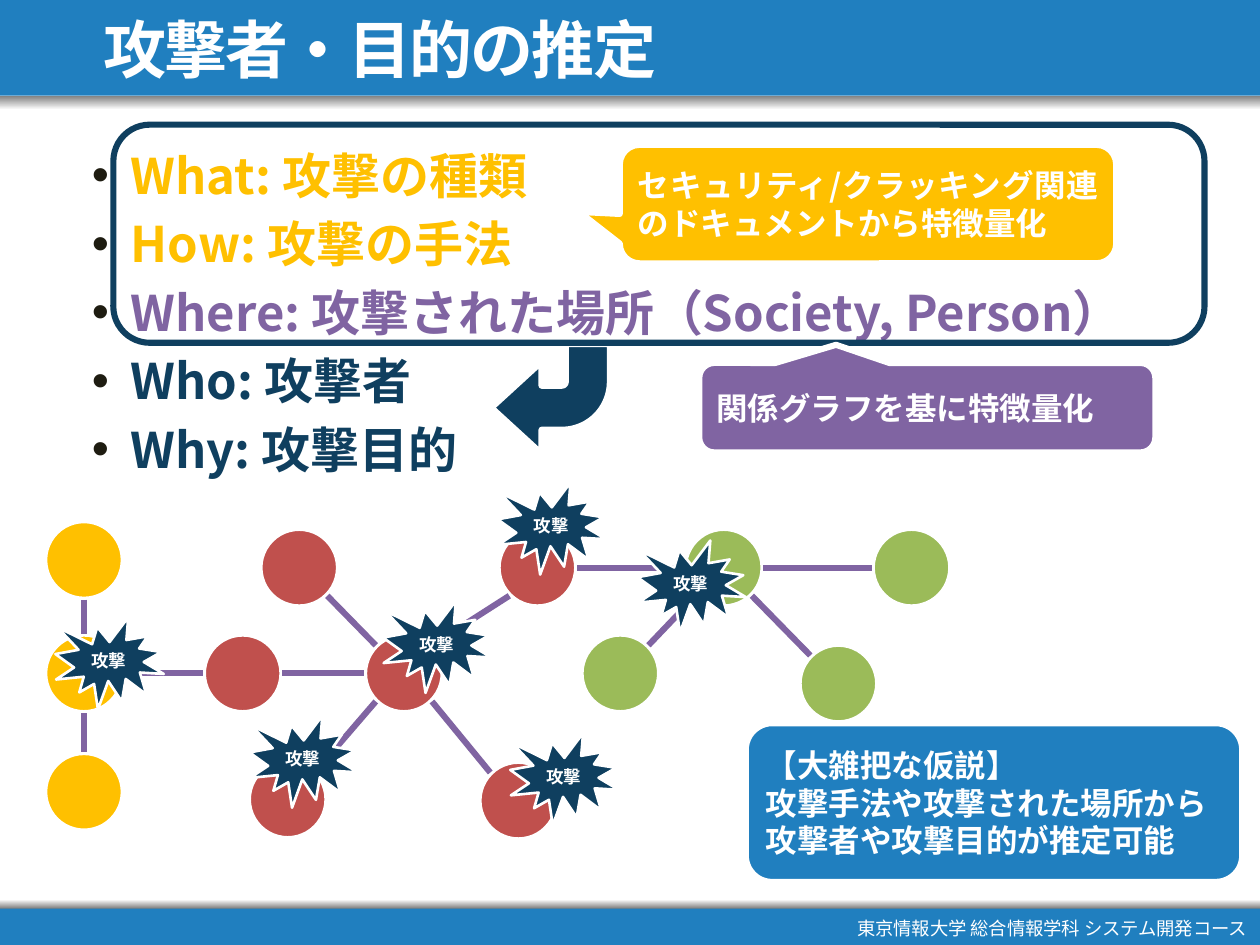
from math import atan2, cos, pi, sin

from lxml.etree import SubElement
from pptx import Presentation
from pptx.dml.color import RGBColor
from pptx.enum.shapes import MSO_CONNECTOR, MSO_SHAPE
from pptx.enum.text import MSO_ANCHOR, PP_ALIGN
from pptx.oxml.ns import qn
from pptx.util import Pt

STRAIGHT = MSO_CONNECTOR.STRAIGHT
RECT, ROUNDED = MSO_SHAPE.RECTANGLE, MSO_SHAPE.ROUNDED_RECTANGLE
CALLOUT, BURST = MSO_SHAPE.ROUNDED_RECTANGULAR_CALLOUT, MSO_SHAPE.EXPLOSION1
OVAL, BENT_ARROW = MSO_SHAPE.OVAL, MSO_SHAPE.BENT_ARROW
MIDDLE, BOTTOM = MSO_ANCHOR.MIDDLE, MSO_ANCHOR.BOTTOM
LEFT, CENTER, RIGHT = PP_ALIGN.LEFT, PP_ALIGN.CENTER, PP_ALIGN.RIGHT
JUSTIFY = PP_ALIGN.JUSTIFY

FONT = "Noto Sans CJK JP"
WHITE, BLUE, NAVY = "FFFFFF", "207FBF", "0F3F5F"
YELLOW, PURPLE, RED, GREEN = "FFC000", "8064A2", "C0504D", "9BBB59"
color = RGBColor.from_string


def add_block(kind, left, top, width, height, fill=None, line=WHITE, weight=3.5):
    block = slide.shapes.add_shape(kind, Pt(left), Pt(top), Pt(width), Pt(height))
    block.shadow.inherit = False
    if fill:
        block.fill.solid()
        block.fill.fore_color.rgb = color(fill)
    else:
        block.fill.background()
    if line:
        block.line.color.rgb = color(line)
        block.line.width = Pt(weight)
    else:
        block.line.fill.background()
    return block


def write(block, text, size, fill=WHITE, align=LEFT, anchor=MIDDLE, bold=True):
    frame = block.text_frame
    frame.text = text
    frame.word_wrap = True
    frame.vertical_anchor = anchor
    for paragraph in frame.paragraphs:
        paragraph.alignment = align
        paragraph.line_spacing = Pt(size * 1.2)
        for run in paragraph.runs:
            run.font.name = FONT
            run.font.size = Pt(size)
            run.font.bold = bold
            run.font.color.rgb = color(fill)
            SubElement(run.font._element, qn("a:ea")).set("typeface", FONT)
    return frame


prs = Presentation()
prs.slide_width, prs.slide_height = Pt(720), Pt(540)
slide = prs.slides.add_slide(prs.slide_layouts[5])

for top, height, upper, lower in [(54.7, 8, "7F7F7F", WHITE), (514, 5.2, WHITE, "7F7F7F")]:
    shade = add_block(RECT, 0, top, 720, height, WHITE, None)
    shade.fill.gradient()
    shade.fill.gradient_angle = 270
    for stop, tint in zip(shade.fill.gradient_stops, (upper, lower)):
        stop.color.rgb = color(tint)
add_block(RECT, 0, 519.2, 720, 20.8, BLUE, None)
add_block(RECT, 0, 0, 720, 54.7, BLUE, None)

course = slide.shapes.add_textbox(Pt(320.4), Pt(519.8), Pt(399.6), Pt(20.2))
write(course, "東京情報大学 総合情報学科 システム開発コース", 10.5, align=RIGHT, anchor=BOTTOM, bold=False)

title = slide.shapes.title
title.element.getparent().append(title.element)
title.left, title.top, title.width, title.height = Pt(51.8), Pt(0.7), Pt(668.2), Pt(54)
heading = write(title, "攻撃者・目的の推定", 36)
heading.paragraphs[0].runs[0].font._element.set("spc", "-100")

questions = [
    ("What: 攻撃の種類", YELLOW),
    ("How: 攻撃の手法", YELLOW),
    ("Where: 攻撃された場所（Society, Person）", PURPLE),
    ("Who: 攻撃者", NAVY),
    ("Why: 攻撃目的", NAVY),
]
question_list = slide.shapes.add_textbox(Pt(0), Pt(79.4), Pt(720), Pt(445))
lines = write(question_list, "\n".join(text for text, _ in questions), 28, anchor=MSO_ANCHOR.TOP)
for number, (paragraph, (_, tint)) in enumerate(zip(lines.paragraphs, questions)):
    paragraph.space_before = Pt(5.6 if number else 0)
    paragraph.runs[0].font.color.rgb = color(tint)
    props = paragraph._p.get_or_add_pPr()
    props.set("marL", str(Pt(67.7)))
    props.set("indent", str(Pt(-22.3)))
    bullet_color = SubElement(props, qn("a:buClr"))
    SubElement(bullet_color, qn("a:srgbClr")).set("val", "1E1C11")
    SubElement(props, qn("a:buFont")).set("typeface", "Arial")
    SubElement(props, qn("a:buChar")).set("char", "•")

inference = add_block(BENT_ARROW, 280.8, 196.6, 67.7, 62.6, NAVY)
inference.rotation = 180
for index, value in enumerate((0.402, 0.419, 0.457, 0.438)):
    inference.adjustments[index] = value

add_block(ROUNDED, 64.8, 71.3, 623.5, 124.6, line=NAVY)

for frame, fill, tail, text in [
    ((354.2, 82.8, 283.7, 67.7), YELLOW, (-0.582, 0.066),
     "セキュリティ/クラッキング関連のドキュメントから特徴量化"),
    ((399.6, 207.4, 260.6, 51.1), PURPLE, (-0.2, -0.703), "関係グラフを基に特徴量化"),
]:
    callout = add_block(CALLOUT, *frame, fill)
    callout.adjustments[0], callout.adjustments[1] = tail
    write(callout, text, 18, align=JUSTIFY)

RADIUS = 22.7
nodes = {
    "y1": (48, 320, YELLOW), "y2": (48, 384.8, YELLOW), "y3": (48, 452.5, YELLOW),
    "r1": (138.7, 384.8, RED), "r2": (171, 324.4, RED), "r3": (230.8, 384.8, RED),
    "r4": (164.4, 456.8, RED), "r5": (307.1, 324.4, RED), "r6": (296.2, 457.5, RED),
    "g1": (354.5, 384.8, GREEN), "g2": (413.6, 324.4, GREEN),
    "g3": (520.9, 324.4, GREEN), "g4": (479.1, 390.6, GREEN),
}
for x, y, fill in nodes.values():
    add_block(OVAL, x - RADIUS, y - RADIUS, 2 * RADIUS, 2 * RADIUS, fill)

links = "y1-y2 y2-y3 y2-r1 r1-r3 r2-r3 r3-r4 r3-r5 r3-r6 r5-g2 g1-g2 g2-g3 g2-g4"
for link in links.split():
    (x1, y1, _), (x2, y2, _) = (nodes[key] for key in link.split("-"))
    angle = round(atan2(y2 - y1, x2 - x1) / (pi / 4)) * pi / 4
    dx, dy = RADIUS * cos(angle), RADIUS * sin(angle)
    edge = slide.shapes.add_connector(STRAIGHT, Pt(x1 + dx), Pt(y1 + dy), Pt(x2 - dx), Pt(y2 - dy))
    edge.line.color.rgb = color(PURPLE)
    edge.line.width = Pt(3.5)
    SubElement(edge._element.spPr, qn("a:effectLst"))

attacks = [(291.6, 419), (218.9, 343.4), (284.4, 275.8), (364.3, 308.9), (31.7, 352.8), (142.6, 409)]
for left, top in attacks:
    attack = add_block(BURST, left, top, 61.9, 52.6, NAVY, weight=1.5)
    label = write(attack, "攻撃", 10, align=CENTER)
    label.word_wrap = False
    label.margin_left = label.margin_right = label.margin_top = label.margin_bottom = 0

hypothesis = add_block(ROUNDED, 426.2, 413.3, 283.7, 90.7, BLUE)
write(hypothesis, "【大雑把な仮説】\n攻撃手法や攻撃された場所から\n攻撃者や攻撃目的が推定可能", 18)

prs.save("out.pptx")
